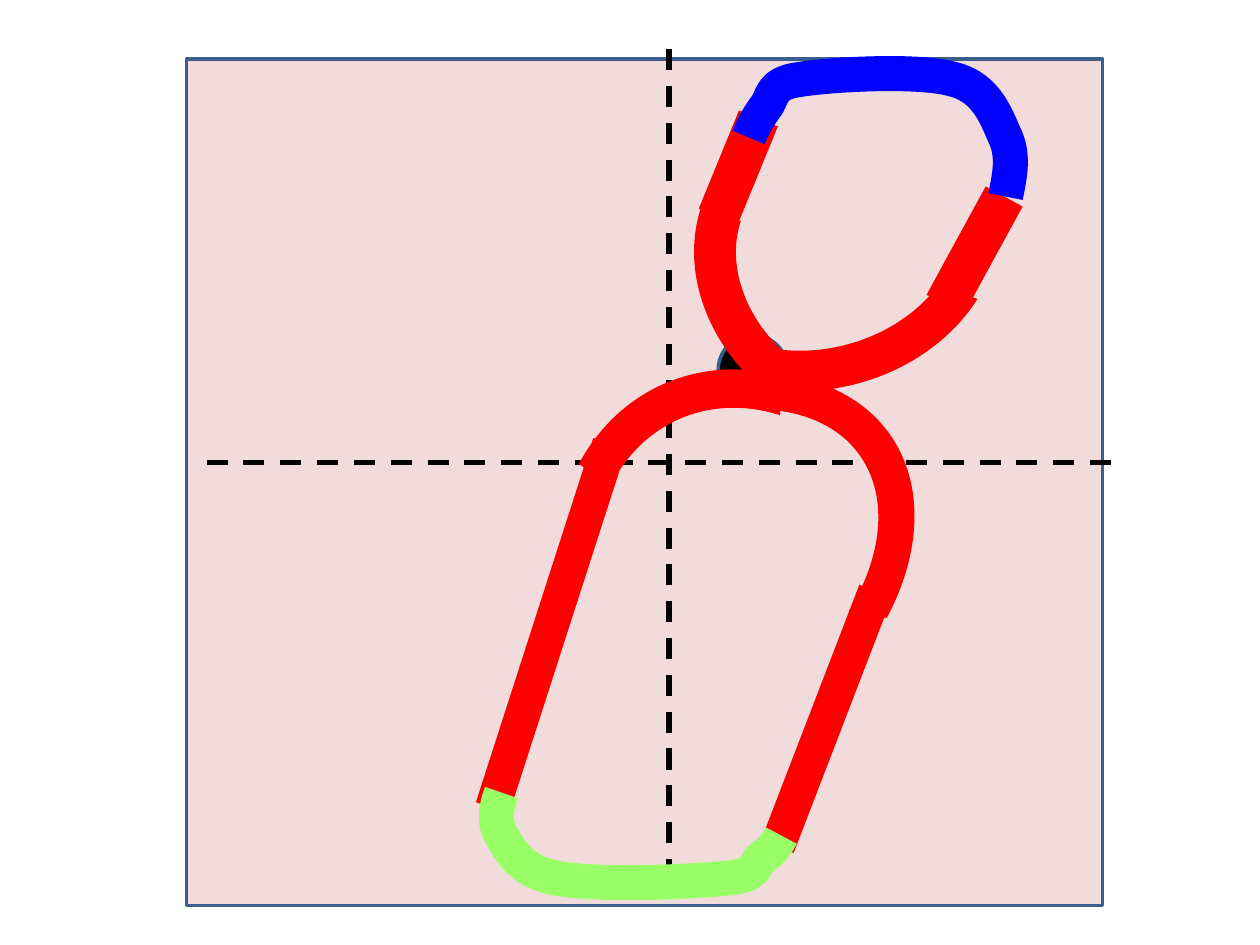
"""Build a slide of two red loops with coloured caps on a dashed cross."""
import pptx
import pptx.dml.color
import pptx.enum.dml
import pptx.enum.shapes
import pptx.oxml.ns
import pptx.util
from lxml import etree

Pt = pptx.util.Pt
RGB = pptx.dml.color.RGBColor
KIND = pptx.enum.shapes.MSO_SHAPE
PINK = RGB(0xF2, 0xDC, 0xDB)
NAVY = RGB(0x3A, 0x5F, 0x8C)
BLACK = RGB(0x00, 0x00, 0x00)
RED = RGB(0xFF, 0x00, 0x00)
GREEN = RGB(0x99, 0xFF, 0x66)
BLUE = RGB(0x00, 0x00, 0xFF)

LOW_CAP = [
    (446.4, 477.4),
    (444.2, 481.7), (441.4, 486), (435.6, 489.6),
    (430.6, 493.9), (434.2, 500.4), (414.7, 501.8),
    (395.3, 504), (339.8, 506.2), (318.2, 501.8),
    (297.4, 498.2), (291.6, 486), (286.6, 477.4),
    (281.5, 469.4), (283.7, 460.8), (286.6, 452.9),
]
TOP_CAP = [
    (427.7, 78.5),
    (429.8, 73.4), (432.7, 67.7), (437, 61.9),
    (442.1, 56.2), (439.2, 47.5), (457.2, 45.4),
    (475.2, 42.5), (525.6, 39.6), (545, 45.4),
    (564.5, 50.4), (569.5, 67.7), (574.6, 78.5),
    (579.6, 90), (576.7, 101.5), (574.6, 112.3),
]


def add_shape(slide, kind, box, fill, edge=None):
    shape = slide.shapes.add_shape(kind, *map(Pt, box))
    shape.shadow.inherit = False
    shape.fill.solid()
    shape.fill.fore_color.rgb = fill
    if edge is None:
        shape.line.fill.background()
    else:
        shape.line.color.rgb = edge
        shape.line.width = Pt(2)
    return shape


def add_arc(slide, box, turn, start, end, thick, flip=False):
    arc = add_shape(slide, KIND.BLOCK_ARC, box, RED)
    for i, value in enumerate((start, end, thick)):
        arc.adjustments[i] = value
    arc.rotation = turn
    if flip:
        arc.element.spPr.find(pptx.oxml.ns.qn("a:xfrm")).set("flipH", "1")


def add_line(slide, ends, color, width, dash=False):
    line = slide.shapes.add_connector(
        pptx.enum.shapes.MSO_CONNECTOR.STRAIGHT, *map(Pt, ends))
    line.line.color.rgb = color
    line.line.width = Pt(width)
    if dash:
        line.line.dash_style = pptx.enum.dml.MSO_LINE.DASH
    props = line.element.find(pptx.oxml.ns.qn("p:spPr"))
    etree.SubElement(props, pptx.oxml.ns.qn("a:effectLst"))


def turn_half(knots):
    xs, ys = zip(*knots)
    wide, high = min(xs) + max(xs), min(ys) + max(ys)
    return [(wide - x, high - y) for x, y in knots]


def bend(curve):
    qn = pptx.oxml.ns.qn
    trail = next(curve.element.iter(qn("a:path")))
    legs = trail.findall(qn("a:lnTo"))
    for i in range(0, len(legs), 3):
        bow = etree.SubElement(trail, qn("a:cubicBezTo"))
        for leg in legs[i:i + 3]:
            bow.append(leg[0])
            trail.remove(leg)


def add_curve(slide, knots, color, turn=0):
    spots = [(Pt(x), Pt(y)) for x, y in knots]
    pen = slide.shapes.build_freeform(*spots[0])
    pen.add_line_segments(spots[1:], close=False)
    curve = pen.convert_to_shape()
    bend(curve)
    curve.rotation = turn
    curve.shadow.inherit = False
    curve.fill.background()
    curve.line.color.rgb = color
    curve.line.width = Pt(20)


def main():
    deck = pptx.Presentation()
    deck.slide_width, deck.slide_height = Pt(720), Pt(540)
    slide = deck.slides.add_slide(deck.slide_layouts[6])

    add_shape(slide, KIND.RECTANGLE, (106.6, 33.8, 523.4, 483.8), PINK, NAVY)
    add_line(slide, (118.1, 264.2, 641.5, 264.2), BLACK, 3, dash=True)
    add_line(slide, (382.3, 28.1, 382.3, 506.2), BLACK, 3, dash=True)
    add_shape(slide, KIND.OVAL, (410.4, 191.5, 39.6, 39.6), BLACK, NAVY)

    add_line(slide, (433.4, 67.7, 410.4, 123.8), RED, 24)
    add_line(slide, (573.8, 112.3, 540, 174.2), RED, 24)
    add_arc(slide, (391.7, 71.3, 203, 172.8), 215.8, 156.22, 209.03, 0.139)
    add_arc(slide, (359.3, 44.6, 213.8, 177.8), 166.5,
            141.46, 194.7, 0.13, flip=True)

    add_arc(slide, (241.2, 229.7, 294.5, 207.4), 144.5,
            189.04, 16.11, 0.101, flip=True)
    add_line(slide, (500.4, 337.7, 444.2, 483.8), RED, 20)
    add_arc(slide, (301.7, 226.1, 259.2, 223.9), 246.6, 197.63, 18.9, 0.098)
    add_line(slide, (348.5, 253.4, 281.5, 461.5), RED, 20)

    add_curve(slide, turn_half(LOW_CAP), GREEN, turn=180)
    add_curve(slide, TOP_CAP, BLUE)
    deck.save("out.pptx")


if __name__ == "__main__":
    main()
